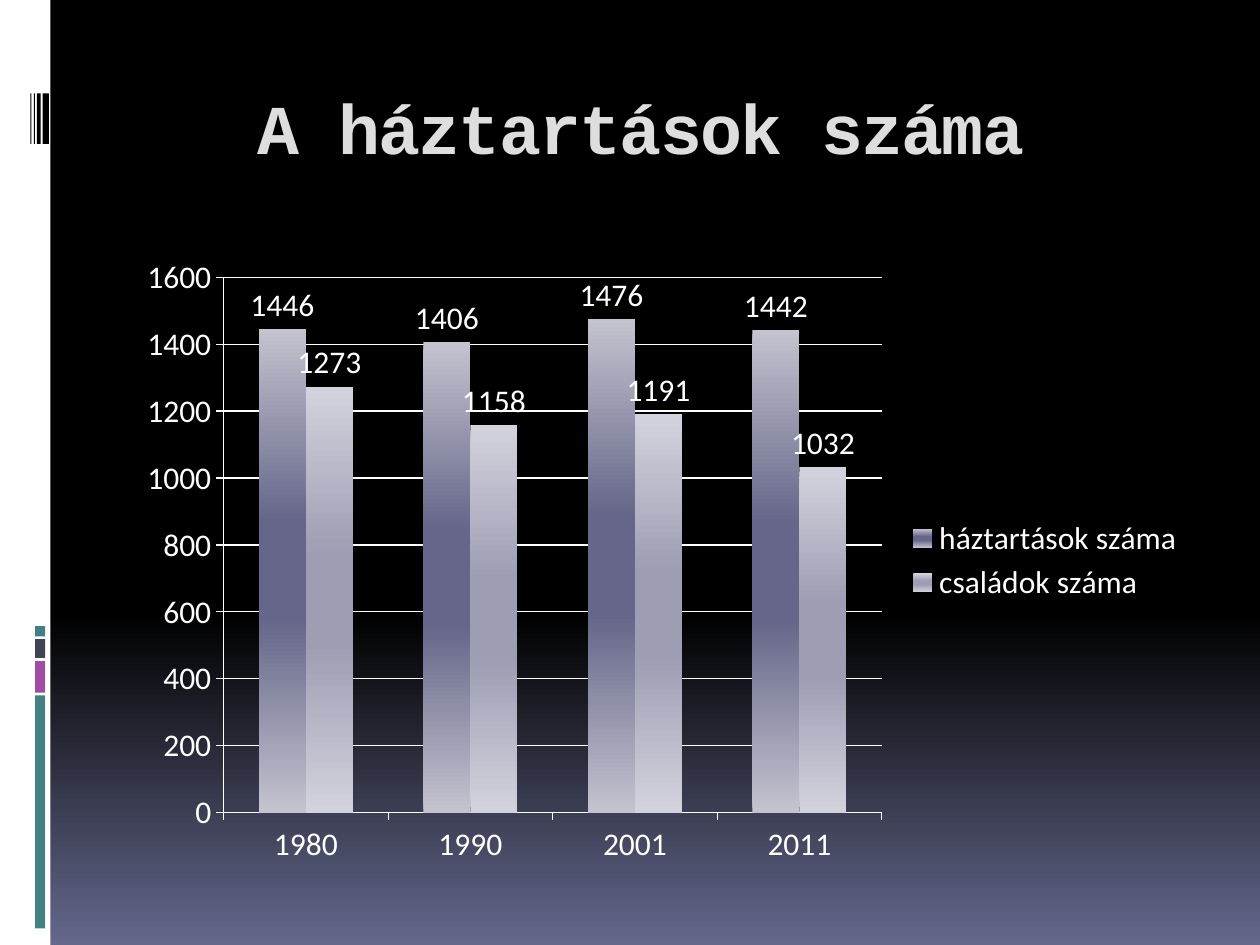
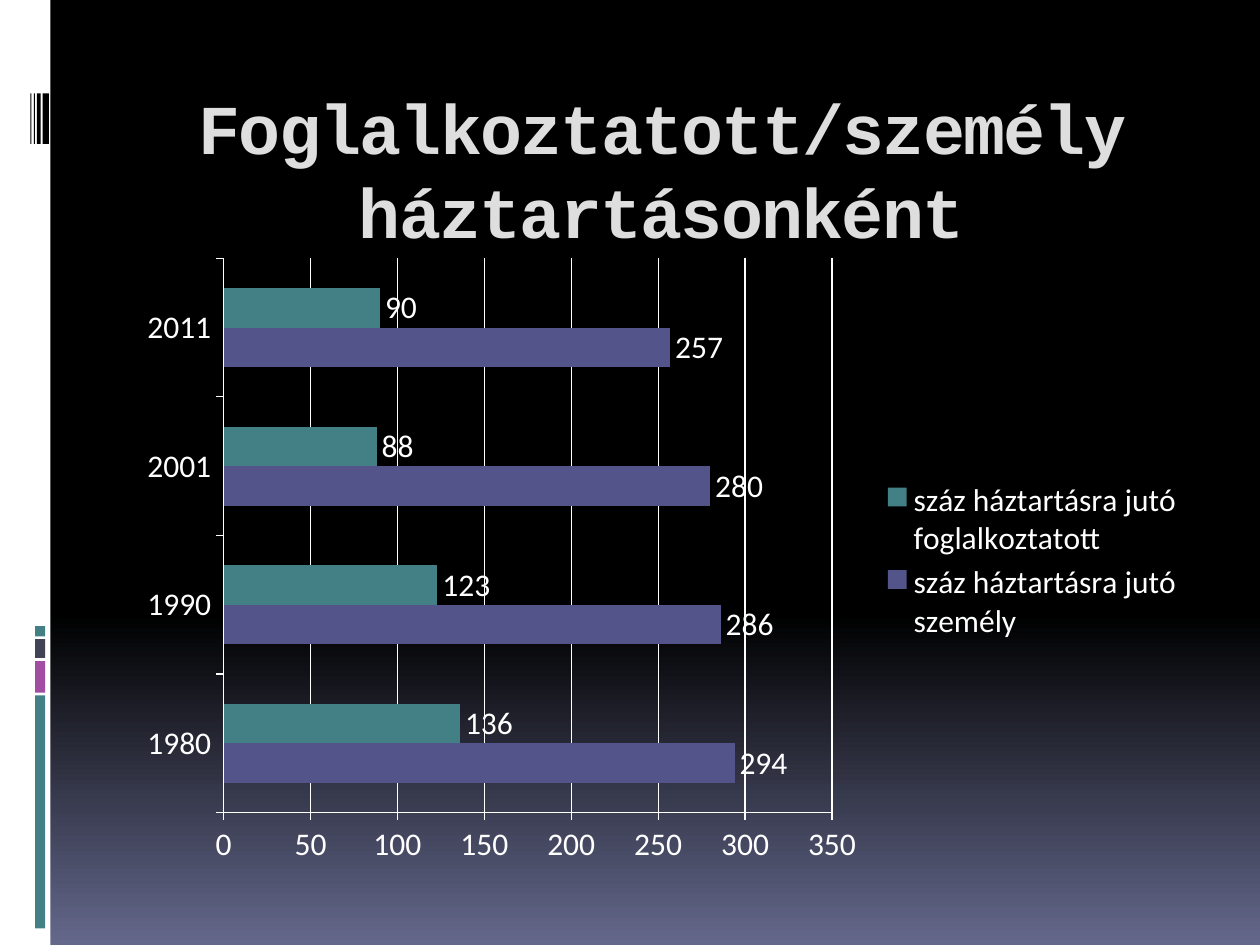
from copy import deepcopy
from dataclasses import dataclass
from typing import NamedTuple

from pptx import Presentation
from pptx.chart.data import CategoryChartData
from pptx.dml.color import RGBColor
from pptx.enum.chart import XL_CHART_TYPE as ChartType
from pptx.enum.chart import XL_LABEL_POSITION as LabelPosition
from pptx.enum.chart import XL_LEGEND_POSITION as LegendPosition
from pptx.enum.chart import XL_TICK_MARK as TickMark
from pptx.enum.shapes import MSO_SHAPE as ShapeKind
from pptx.enum.text import MSO_ANCHOR as Anchor
from pptx.enum.text import PP_ALIGN as Align
from pptx.oxml.ns import qn
from pptx.util import Pt

WHITE, BLACK = "FFFFFF", "000000"
TEAL, PURPLE, SLATE, INDIGO = "438086", "A04DA3", "424456", "53548A"
TITLE_COLOR = "DEDEDE"
TITLE_FONT, CHART_FONT = "Courier New", "Calibri"
CONTENT_LEFT, CONTENT_WIDTH = 72, 612
YEARS = ("1980", "1990", "2001", "2011")


class Stop(NamedTuple):
    position: float
    color: str


class Bar(NamedTuple):
    left: float
    top: float
    width: float
    height: float
    color: str


@dataclass
class Series:
    name: str
    values: tuple[int, ...]
    stops: tuple[Stop, ...]


@dataclass
class ChartSlide:
    title: str
    title_width: float
    title_height: float
    chart_type: ChartType
    series: tuple[Series, ...]


BACKGROUND = (Stop(0, BLACK), Stop(0.65, BLACK), Stop(1, "64688B"))

# White side band, coloured stack and barcode stripes
SIDE_BARS = (
    Bar(0, 0, 28.8, 540, WHITE),
    *(Bar(20, top, 5.8, height, color) for top, height, color in (
        (397.4, 133.2, TEAL), (377.8, 18, PURPLE),
        (365.2, 10.8, SLATE), (357.8, 5.8, TEAL))),
    *(Bar(left, 53.4, width, 28.8, BLACK) for left, width in (
        (24.3, 3.7), (21.1, 2.2), (19.3, 0.7), (17.3, 0.7))),
)


def sheen(edge: str, middle: str) -> tuple[Stop, ...]:
    """Gradient that is light at both ends."""
    return Stop(0, edge), Stop(0.4, middle), Stop(0.6, middle), Stop(1, edge)


SLIDES = (
    ChartSlide(
        "A háztartások száma ", 611.3, 99.4, ChartType.COLUMN_CLUSTERED,
        (Series("háztartások száma", (1446, 1406, 1476, 1442), sheen("C4C3CF", "656689")),
         Series("családok száma", (1273, 1158, 1191, 1032), sheen("D3D3DE", "9D9DB3"))),
    ),
    ChartSlide(
        "Foglalkoztatott/személy háztartásonként", CONTENT_WIDTH, 72, ChartType.BAR_CLUSTERED,
        (Series("száz háztartásra jutó személy", (294, 286, 280, 257), (Stop(0, INDIGO),)),
         Series("száz háztartásra jutó foglalkoztatott", (136, 123, 88, 90), (Stop(0, TEAL),))),
    ),
)


def rgb(color: str) -> RGBColor:
    return RGBColor.from_string(color)


def paint(fill, owner, stops: tuple[Stop, ...]) -> None:
    """Fill with one colour, or with a vertical gradient of several stops."""
    if len(stops) == 1:
        fill.solid()
        fill.fore_color.rgb = rgb(stops[0].color)
        return
    fill.gradient()
    fill.gradient_angle = 270
    stop_list = next(owner.iter(qn("a:gsLst")))
    while len(stop_list) < len(stops):
        stop_list.append(deepcopy(stop_list[0]))
    for gradient_stop, stop in zip(fill.gradient_stops, stops):
        gradient_stop.position = stop.position
        gradient_stop.color.rgb = rgb(stop.color)


def format_line(line) -> None:
    line.color.rgb = rgb(WHITE)
    line.width = Pt(0.75)


def add_side_bars(slide) -> None:
    for bar in SIDE_BARS:
        shape = slide.shapes.add_shape(ShapeKind.RECTANGLE, *map(Pt, bar[:4]))
        shape.shadow.inherit = False
        shape.fill.solid()
        shape.fill.fore_color.rgb = rgb(bar.color)
        shape.line.fill.background()


def add_title(slide, content: ChartSlide) -> None:
    box = slide.shapes.add_textbox(
        Pt(CONTENT_LEFT), Pt(40.3), Pt(content.title_width), Pt(content.title_height))
    frame = box.text_frame
    frame.word_wrap = True
    frame.vertical_anchor = Anchor.TOP
    frame.margin_top = Pt(8)
    frame.text = content.title
    paragraph = frame.paragraphs[0]
    paragraph.alignment = Align.CENTER
    paragraph.line_spacing = Pt(48)
    run = paragraph.runs[0]
    run.font.name = TITLE_FONT
    run.font.size = Pt(40)
    run.font.bold = True
    run.font.color.rgb = rgb(TITLE_COLOR)
    run.font._element.set("spc", "-100")


def add_chart(slide, content: ChartSlide) -> None:
    data = CategoryChartData()
    data.categories = YEARS
    for series in content.series:
        data.add_series(series.name, series.values)
    chart = slide.shapes.add_chart(
        content.chart_type, Pt(CONTENT_LEFT), Pt(140.4), Pt(CONTENT_WIDTH), Pt(360), data).chart
    chart.has_title = False
    chart.font.name = CHART_FONT
    chart.font.size = Pt(18)
    chart.font.color.rgb = rgb(WHITE)

    # Legend
    chart.has_legend = True
    chart.legend.position = LegendPosition.RIGHT
    chart.legend.include_in_layout = False

    # Axes
    for axis in (chart.category_axis, chart.value_axis):
        axis.major_tick_mark = TickMark.OUTSIDE
        axis.minor_tick_mark = TickMark.NONE
        format_line(axis.format.line)
    chart.value_axis.has_major_gridlines = True
    format_line(chart.value_axis.major_gridlines.format.line)

    # Bars and value labels
    plot = chart.plots[0]
    plot.gap_width = 150
    plot.overlap = 0
    plot.vary_by_categories = False
    for drawn, series in zip(plot.series, content.series):
        paint(drawn.format.fill, drawn._element, series.stops)
        drawn.data_labels.show_value = True
        drawn.data_labels.position = LabelPosition.OUTSIDE_END


def main() -> None:
    presentation = Presentation()
    presentation.slide_width, presentation.slide_height = Pt(720), Pt(540)
    blank_layout = presentation.slide_layouts[6]
    for content in SLIDES:
        slide = presentation.slides.add_slide(blank_layout)
        paint(slide.background.fill, slide._element, BACKGROUND)
        add_side_bars(slide)
        add_title(slide, content)
        add_chart(slide, content)
    presentation.save("out.pptx")


if __name__ == "__main__":
    main()
